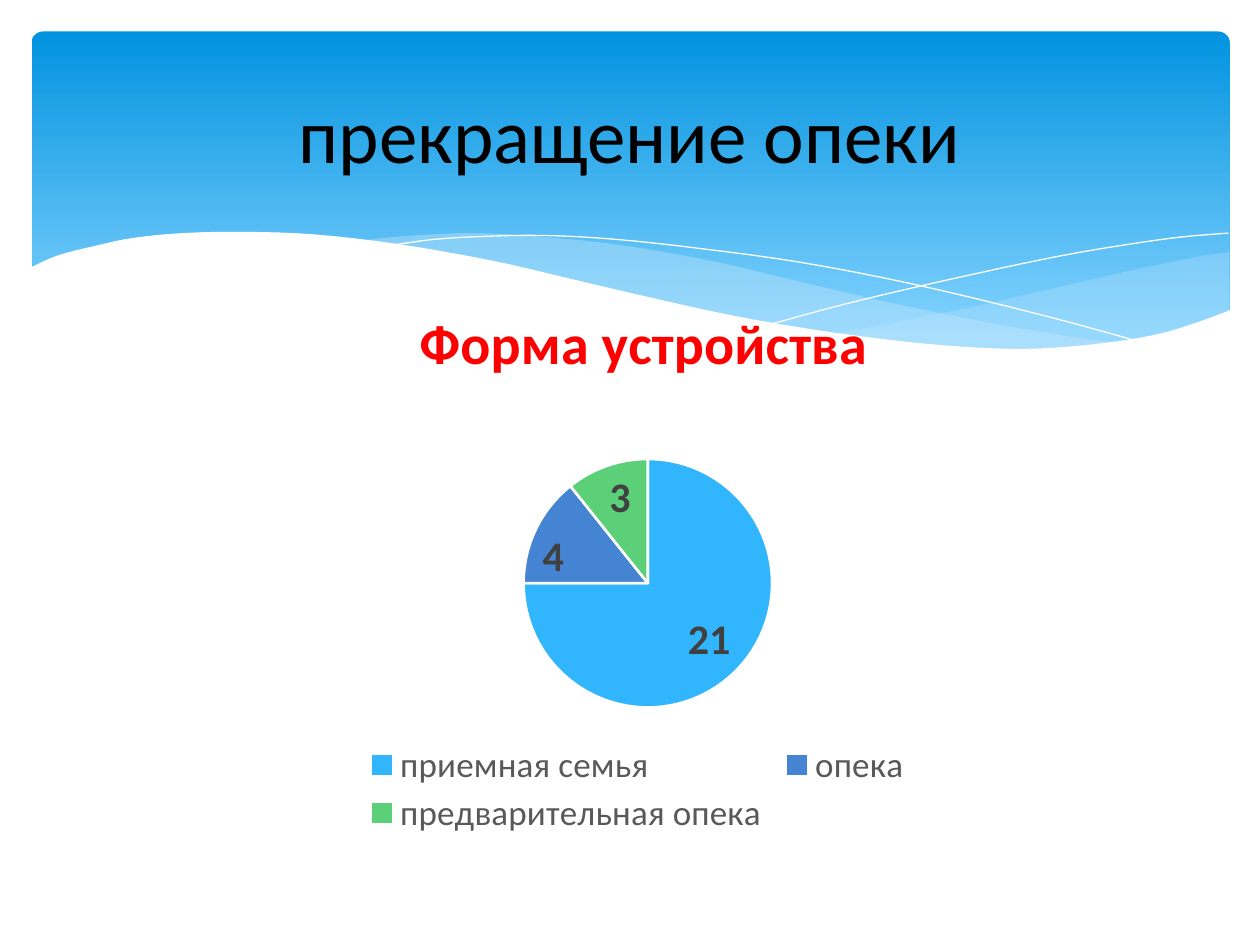
from dataclasses import dataclass
from typing import Optional

from lxml import etree
from pptx import Presentation
from pptx import util as u
from pptx.chart.data import CategoryChartData
from pptx.dml.color import RGBColor
from pptx.enum import chart as charts, shapes, text
from pptx.oxml import ns

Pt = u.Pt
Point = tuple[float, float]

BLACK = RGBColor(0x00, 0x00, 0x00)
WHITE = RGBColor(0xFF, 0xFF, 0xFF)
RED = RGBColor(0xFF, 0x00, 0x00)
DARK_GREY = RGBColor(0x40, 0x40, 0x40)
GREY = RGBColor(0x59, 0x59, 0x59)
BANNER_TOP = RGBColor(0x02, 0x93, 0xE0)
BANNER_BOTTOM = RGBColor(0x83, 0xD3, 0xFE)
PALE_BLUE = RGBColor(0xC6, 0xE7, 0xFC)
SLICE_COLOURS = [RGBColor(0x31, 0xB6, 0xFD), RGBColor(0x45, 0x84, 0xD3),
                 RGBColor(0x5B, 0xD0, 0x78)]
FONT = "Calibri"


@dataclass
class Wave:
    """A run of smooth curves joined end to end; filled if it has an opacity."""
    curves: list[list[Point]]
    colour: RGBColor
    opacity: Optional[int] = None


WAVES = [
    Wave([[(476, 190.8), (508, 185), (561, 174.2), (620, 160.6), (652, 153.4),
           (682.5, 147), (702.5, 144)],
          [(702.5, 178), (683, 185), (662.5, 191), (640, 195), (614.6, 198),
           (586, 200), (553.7, 199), (517.7, 195), (476, 190.8)]], PALE_BLUE, 29),
    Wave([[(206, 137.5), (236, 134.6), (273.6, 133.2), (318, 136), (361, 141),
           (409.7, 149.8), (453, 160), (508, 172.8), (558, 183), (602.6, 191),
           (643, 196.6)],
          [(643, 196.6), (610, 199.4), (573, 200), (530, 198), (479, 191.5),
           (432.7, 184.3), (382, 172.8), (323, 160), (276, 149), (233, 141),
           (206, 137.5)]], PALE_BLUE, 40),
    Wave([[(222.5, 140.4), (248, 136.8), (279, 135), (312, 134.6), (352, 136.8),
           (400, 142), (458, 150), (523.4, 162.7), (598, 180.7), (653, 195.8)]], WHITE),
    Wave([[(441.5, 185), (484, 173.5), (538.6, 160.6), (602, 147),
           (644.4, 139.7), (675.4, 135.4), (702, 133.2)]], WHITE),
    Wave([[(16.5, 153.4), (33, 146), (55, 140.4), (76, 136), (105, 133.2),
           (139, 132.5), (180, 134), (227.5, 139.5), (281.5, 149), (322, 158.4),
           (362, 167.8), (417, 180), (466.5, 188.6), (510, 194.4), (548, 198),
           (582.5, 199.4), (612, 198), (638.6, 195), (662.4, 190.8),
           (684, 184.3), (703.5, 177)],
          [(703.5, 237), (16.5, 237)]], WHITE, 100),
]


def smooth(nodes: list[Point], steps: int = 4) -> list[Point]:
    """Catmull-Rom points through the nodes."""
    if len(nodes) < 3:
        return nodes
    padded = [nodes[0], *nodes, nodes[-1]]
    points = [nodes[0]]
    for a, b, c, d in zip(padded, padded[1:], padded[2:], padded[3:]):
        for step in range(1, steps + 1):
            t = step / steps
            points.append(tuple(
                0.5 * (2 * q + (r - p) * t + (2 * p - 5 * q + 4 * r - s) * t**2
                       + (3 * q - p - 3 * r + s) * t**3)
                for p, q, r, s in zip(a, b, c, d)))
    return points


def draw_banner(slide) -> None:
    banner = slide.shapes.add_shape(shapes.MSO_SHAPE.ROUNDED_RECTANGLE,
                                    Pt(18), Pt(18), Pt(684.7), Pt(194.4))
    banner.adjustments[0] = 0.034
    banner.shadow.inherit = False
    banner.line.fill.background()
    banner.fill.gradient()
    banner.fill.gradient_angle = 270
    stops = banner.fill.gradient_stops
    for stop, position, colour in zip(stops, (0, 0.9), (BANNER_TOP, BANNER_BOTTOM)):
        stop.position = position
        stop.color.rgb = colour


def draw_wave(slide, wave: Wave) -> None:
    filled = wave.opacity is not None
    points = [(Pt(x), Pt(y)) for curve in wave.curves for x, y in smooth(curve)]
    builder = slide.shapes.build_freeform(*points[0])
    builder.add_line_segments(points[1:], close=filled)
    shape = builder.convert_to_shape()
    shape.shadow.inherit = False
    if not filled:
        shape.fill.background()
        shape.line.color.rgb = wave.colour
        shape.line.width = Pt(0)
        return
    shape.line.fill.background()
    shape.fill.solid()
    shape.fill.fore_color.rgb = wave.colour
    if wave.opacity < 100:
        colour = shape._element.spPr.find(ns.qn("a:solidFill"))[0]
        etree.SubElement(colour, ns.qn("a:alpha"), val=str(wave.opacity * 1000))


def style_font(font, size: float, colour: RGBColor, bold: bool = False) -> None:
    font.name = FONT
    font.size = Pt(size)
    font.bold = bold
    font.color.rgb = colour


def set_title(slide, wording: str) -> None:
    title = slide.shapes.title
    title.left, title.top, title.width, title.height = Pt(36), Pt(26.6), Pt(648), Pt(98.6)
    title.text_frame.text = wording
    title.text_frame.vertical_anchor = text.MSO_ANCHOR.MIDDLE
    paragraph = title.text_frame.paragraphs[0]
    paragraph.alignment = text.PP_ALIGN.CENTER
    style_font(paragraph.runs[0].font, 44, BLACK)
    slide.shapes._spTree.append(title._element)  # bring in front of the banner


def place(element, index: int, inner: bool = False, **fractions: float) -> None:
    """Give a chart part a manual layout in fractions of the chart."""
    for old in element.findall(ns.qn("c:layout")):
        element.remove(old)
    layout = etree.Element(ns.qn("c:layout"))
    manual = etree.SubElement(layout, ns.qn("c:manualLayout"))
    if inner:
        etree.SubElement(manual, ns.qn("c:layoutTarget"), val="inner")
    for mode in ("xMode", "yMode"):
        etree.SubElement(manual, ns.qn(f"c:{mode}"), val="edge")
    for name, value in fractions.items():
        etree.SubElement(manual, ns.qn(f"c:{name}"), val=str(value))
    element.insert(index, layout)


def draw_pie(slide) -> None:
    data = CategoryChartData()
    data.categories = ["приемная семья", "опека", "предварительная опека"]
    data.add_series("Форма устройства", (21, 4, 3))
    chart = slide.shapes.add_chart(charts.XL_CHART_TYPE.PIE, Pt(68.4), Pt(151.2),
                                   Pt(591.8), Pt(331.2), data).chart
    style_font(chart.font, 10, BLACK)

    chart.has_title = True
    chart.chart_title.text_frame.text = "Форма устройства"
    heading = chart.chart_title.text_frame.paragraphs[0].runs[0]
    style_font(heading.font, 32, RED, bold=True)
    place(chart.chart_title._element, 1, x=0.28, y=0.05)

    chart.has_legend = True
    chart.legend.position = charts.XL_LEGEND_POSITION.BOTTOM
    chart.legend.include_in_layout = False
    style_font(chart.legend.font, 20, GREY)
    place(chart.legend._element, 1, x=0.23, y=0.82, w=0.54, h=0.17)

    plot = chart.plots[0]
    plot.vary_by_categories = True
    series = plot.series[0]
    for index, colour in enumerate(SLICE_COLOURS):
        slice_format = series.points[index].format
        slice_format.fill.solid()
        slice_format.fill.fore_color.rgb = colour
        slice_format.line.color.rgb = WHITE
        slice_format.line.width = Pt(1.5)
    labels = series.data_labels
    labels.show_value = True
    labels.position = charts.XL_LABEL_POSITION.INSIDE_END
    style_font(labels.font, 24, DARK_GREY, bold=True)
    plot_area = chart._chartSpace.find(f".//{ns.qn('c:plotArea')}")
    place(plot_area, 0, inner=True, x=0.39, y=0.33, w=0.24, h=0.44)


def main() -> None:
    presentation = Presentation()
    presentation.slide_width, presentation.slide_height = Pt(720), Pt(540)
    slide = presentation.slides.add_slide(presentation.slide_layouts[5])
    draw_banner(slide)
    for wave in WAVES:
        draw_wave(slide, wave)
    set_title(slide, "прекращение опеки")
    draw_pie(slide)
    presentation.save("out.pptx")


if __name__ == "__main__":
    main()
